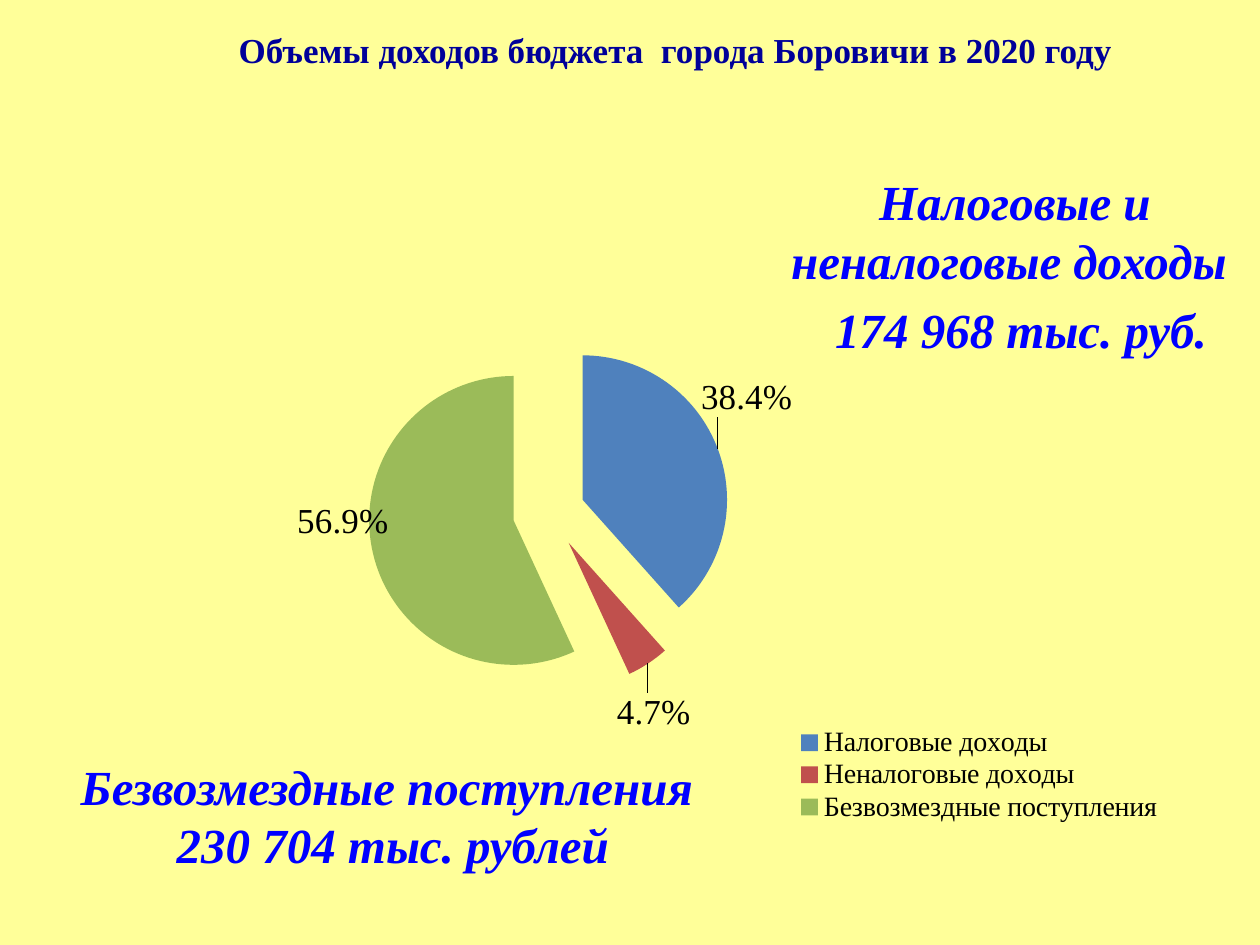
from lxml import etree
from pptx import Presentation
from pptx.chart.data import CategoryChartData
from pptx.dml.color import RGBColor
from pptx.enum.chart import XL_CHART_TYPE, XL_LABEL_POSITION, XL_LEGEND_POSITION
from pptx.enum.text import PP_ALIGN
from pptx.oxml.ns import qn
from pptx.util import Pt

PIE = XL_CHART_TYPE.PIE
OUTSIDE_END = XL_LABEL_POSITION.OUTSIDE_END
BOTTOM = XL_LEGEND_POSITION.BOTTOM
CENTER = PP_ALIGN.CENTER

SERIF = "Times New Roman"
PERCENT = "0.0%"
COLORS = {
    "background": "FFFF99",
    "title": "000099",
    "caption": "0000FF",
    "text": "000000",
}
# category, share, slice colour, label shift as a fraction of the chart
INCOME = [
    ("Налоговые доходы", 0.384, "4F81BD", (-0.02, -0.05)),
    ("Неналоговые доходы", 0.047, "C0504D", (-0.03, 0.04)),
    ("Безвозмездные поступления", 0.569, "9BBB59", (0.02, -0.09)),
]


def rgb(name):
    return RGBColor.from_string(COLORS[name])


def style_font(font, size, color, name=SERIF):
    font.name = name
    font.size = Pt(size)
    font.color.rgb = rgb(color)


def add_text(page, frame, lines, size, color, italic=False, wrap=True,
             space_before=0, line_spacing=None):
    box = page.shapes.add_textbox(*map(Pt, frame))
    text = box.text_frame
    text.word_wrap = wrap
    text.text = "\n".join(lines)
    for para in text.paragraphs:
        para.alignment = CENTER
        para.space_before = Pt(space_before)
        if line_spacing:
            para.line_spacing = Pt(line_spacing)
        style_font(para.font, size, color)
        para.font.bold = True
        para.font.italic = italic


def chart_element(tag, **attributes):
    return etree.Element(qn(f"c:{tag}"), attributes)


def manual_layout(**values):
    """Return a c:layout that holds the given settings in their order."""
    layout = chart_element("layout")
    manual = etree.SubElement(layout, qn("c:manualLayout"))
    for tag, value in values.items():
        manual.append(chart_element(tag, val=str(value)))
    return layout


def color_slices(series):
    for index, (_, _, color, _) in enumerate(INCOME):
        fill = series.points[index].format.fill
        fill.solid()
        fill.fore_color.rgb = RGBColor.from_string(color)
    first_point = series._element.find(qn("c:dPt"))
    first_point.addprevious(chart_element("explosion", val="25"))


def label_slices(series):
    labels = series.data_labels
    labels.show_value = True
    labels.number_format = PERCENT
    labels.number_format_is_linked = False
    style_font(labels.font, 20, "text")
    for index, (_, _, _, (x, y)) in enumerate(INCOME):
        label = series.points[index].data_label
        style_font(label.font, 20, "text")
        label.position = OUTSIDE_END
    for element, row in zip(series._element.iter(qn("c:dLbl")), INCOME):
        x, y = row[3]
        element.insert(1, manual_layout(x=x, y=y))
        element.insert(2, chart_element("numFmt", formatCode=PERCENT, sourceLinked="0"))


def place_plot(chart):
    area = chart._chartSpace.chart.plotArea
    for old in area.findall(qn("c:layout")):
        area.remove(old)
    area.insert(0, manual_layout(layoutTarget="inner", xMode="edge", yMode="edge",
                                 x=0.005, y=0.119, w=0.835, h=0.633))


def add_legend(chart):
    chart.has_legend = True
    legend = chart.legend
    legend.position = BOTTOM
    legend.include_in_layout = False
    style_font(legend.font, 16, "text")
    element = legend._element
    for old in element.findall(qn("c:layout")):
        element.remove(old)
    element.find(qn("c:legendPos")).addnext(
        manual_layout(xMode="edge", yMode="edge", x=0.63, y=0.81, w=0.32, h=0.17))


def add_income_pie(page, frame):
    data = CategoryChartData(number_format=PERCENT)
    data.categories = [row[0] for row in INCOME]
    data.add_series("Series 1", [row[1] for row in INCOME])
    chart = page.shapes.add_chart(PIE, *map(Pt, frame), data).chart
    chart.has_title = False
    style_font(chart.font, 10, "text", "Calibri")
    plot = chart.plots[0]
    plot.vary_by_categories = True
    color_slices(plot.series[0])
    label_slices(plot.series[0])
    place_plot(chart)
    add_legend(chart)


def main():
    deck = Presentation()
    deck.slide_width, deck.slide_height = Pt(720), Pt(540)
    page = deck.slides.add_slide(deck.slide_layouts[6])
    page.background.fill.solid()
    page.background.fill.fore_color.rgb = rgb("background")

    add_text(page, (105, 15, 562, 51),
             ["Объемы доходов бюджета  города Боровичи в 2020 году"],
             20, "title", line_spacing=22)
    add_text(page, (440, 94.5, 280, 108),
             ["Налоговые и неналоговые доходы ", " 174 968 тыс. руб."],
             28, "caption", italic=True, space_before=5.6)
    add_text(page, (23, 428.5, 403, 97),
             ["Безвозмездные поступления ", "230 704 тыс. рублей"],
             28, "caption", italic=True, wrap=False)
    add_income_pie(page, (31, 151, 669, 326))
    deck.save("out.pptx")


if __name__ == "__main__":
    main()
